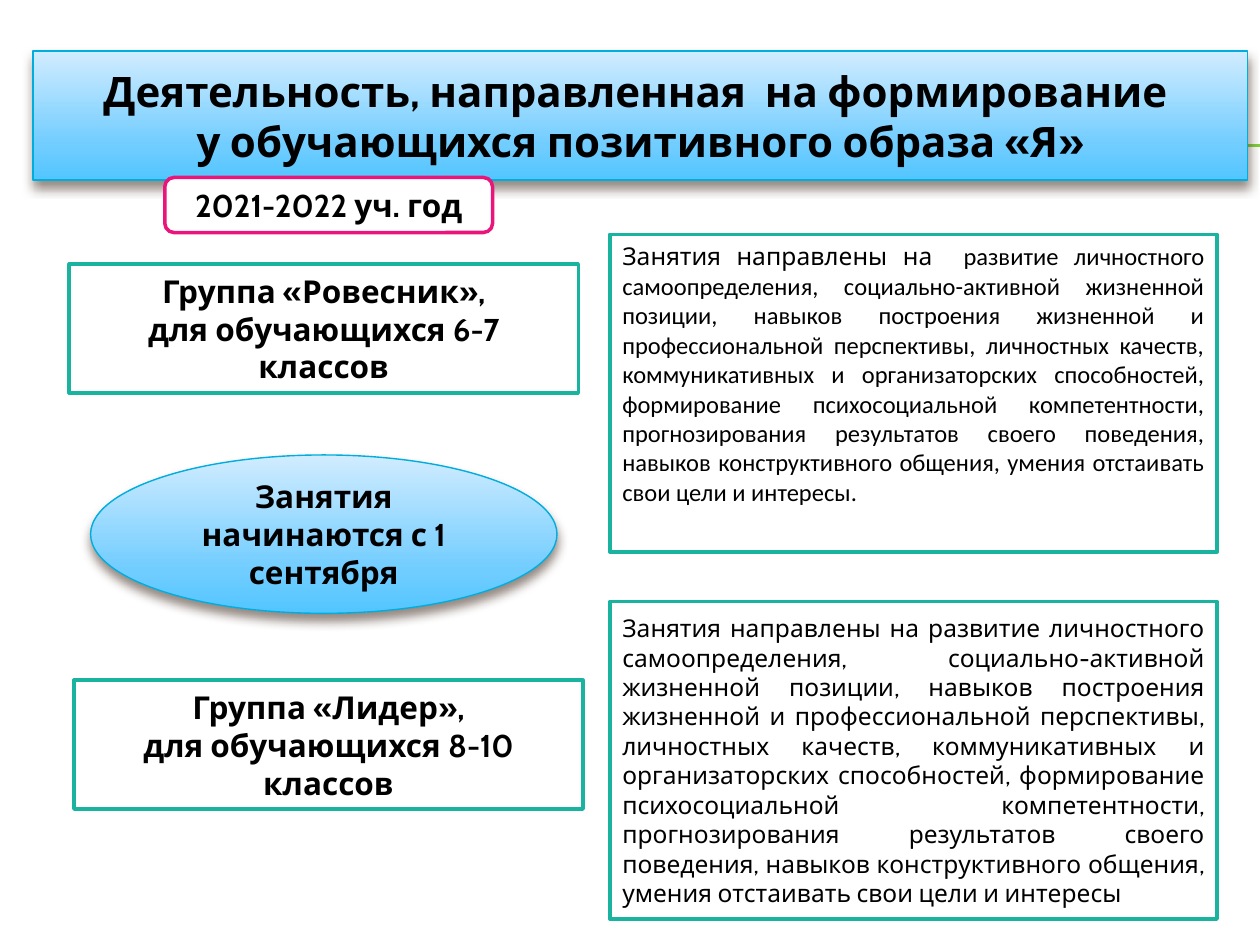
"""Builds a slide on activities that shape a positive self-image in students."""
from copy import deepcopy

from lxml import etree
from pptx import Presentation
from pptx.dml.color import RGBColor
from pptx.enum.shapes import MSO_CONNECTOR, MSO_SHAPE
from pptx.enum.text import MSO_ANCHOR, MSO_AUTO_SIZE, PP_ALIGN
from pptx.oxml.ns import qn
from pptx.util import Pt

RECT, OVAL, ROUNDED = MSO_SHAPE.RECTANGLE, MSO_SHAPE.OVAL, MSO_SHAPE.ROUNDED_RECTANGLE
STRAIGHT = MSO_CONNECTOR.STRAIGHT
CENTER, JUSTIFY = PP_ALIGN.CENTER, PP_ALIGN.JUSTIFY
MIDDLE, NO_AUTOFIT = MSO_ANCHOR.MIDDLE, MSO_AUTO_SIZE.NONE
BLACK = RGBColor(0x00, 0x00, 0x00)
WHITE = RGBColor(0xFF, 0xFF, 0xFF)
GREEN = RGBColor(0x7F, 0xD1, 0x3B)
TEAL = RGBColor(0x1A, 0xB3, 0x9F)
PINK = RGBColor(0xEA, 0x15, 0x7A)
BLUE = RGBColor(0x00, 0xAD, 0xDC)
SHADOW = RGBColor(0x4E, 0x3B, 0x30)
GRADIENT = [
    (0, RGBColor(0xD1, 0xEC, 0xFF)),
    (0.72, RGBColor(0x72, 0xCD, 0xFF)),
    (1, RGBColor(0x52, 0xC6, 0xFF)),
]
HEADING, BODY = "Cabin", "Calibri"

GOALS_START = "Занятия направлены на"
GOALS = (
    "развитие личностного самоопределения, социально-активной жизненной позиции, "
    "навыков построения жизненной и профессиональной перспективы, личностных качеств, "
    "коммуникативных и организаторских способностей, формирование психосоциальной "
    "компетентности, прогнозирования результатов своего поведения, навыков "
    "конструктивного общения, умения отстаивать свои цели и интересы"
)


def write(shape, paragraphs, size, bold=True, align=CENTER):
    frame = shape.text_frame
    frame.word_wrap = True
    frame.auto_size = NO_AUTOFIT
    frame.vertical_anchor = MIDDLE
    for index, runs in enumerate(paragraphs):
        paragraph = frame.add_paragraph() if index else frame.paragraphs[0]
        paragraph.alignment = align
        for text, font_name in runs:
            run = paragraph.add_run()
            run.text = text
            run.font.name = font_name
            run.font.size = Pt(size)
            run.font.bold = bold
            run.font.color.rgb = BLACK


def add_box(kind, left, top, width, height, outline):
    box = slide.shapes.add_shape(kind, Pt(left), Pt(top), Pt(width), Pt(height))
    box.shadow.inherit = False
    box.fill.solid()
    box.fill.fore_color.rgb = WHITE
    box.line.color.rgb = outline
    box.line.width = Pt(2)
    return box


prs = Presentation()
prs.slide_width, prs.slide_height = Pt(720), Pt(540)
slide = prs.slides.add_slide(prs.slide_layouts[5])

title = slide.shapes.title
title.left, title.top, title.width, title.height = Pt(18.9), Pt(29.2), Pt(694), Pt(73.7)
write(title, [
    [("Деятельность, направленная  на формирование ", HEADING)],
    [("у обучающихся позитивного образа «Я»", HEADING)],
], 24)

for rule_top in (82.8, 83.5):
    rule = slide.shapes.add_connector(STRAIGHT, Pt(40.3), Pt(rule_top), Pt(720), Pt(rule_top))
    rule.line.color.rgb = GREEN
    rule.line.width = Pt(0.75)
    etree.SubElement(rule.element.spPr, qn("a:effectLst"))
    title.element.addprevious(rule.element)

goals_peer = add_box(RECT, 348.5, 133.9, 347, 181.5, TEAL)
write(goals_peer, [[(GOALS_START + "  ", HEADING), (GOALS + ".", BODY)]], 14, False, JUSTIFY)
goals_peer.text_frame.margin_bottom = Pt(25.6)

goals_leader = add_box(RECT, 348.5, 343.7, 347, 181.5, TEAL)
write(goals_leader, [[(GOALS_START + " " + GOALS, HEADING)]], 14, False, JUSTIFY)

for left, top, group_name, grades in [
    (39.6, 150.9, "Ровесник", "6-7"),
    (42.3, 388.7, "Лидер", "8-10"),
]:
    group = add_box(RECT, left, top, 290.9, 73.7, TEAL)
    write(group, [
        [(f"Группа «{group_name}»,", HEADING)],
        [(f"для обучающихся {grades} классов", HEADING)],
    ], 18)

start_date = add_box(OVAL, 51.8, 260, 266.5, 90.5, BLUE)
write(start_date, [[("Занятия начинаются с 1 сентября", HEADING)]], 18)

school_year = add_box(ROUNDED, 94.2, 101.4, 187.3, 31.5, PINK)
write(school_year, [[("2021-2022 уч. год", HEADING)]], 18)

for glossy in (title, start_date):
    glossy.fill.gradient()
    glossy.fill.gradient_angle = 270
    properties = glossy.element.spPr
    stop_list = properties.find(".//" + qn("a:gsLst"))
    stop_list.append(deepcopy(stop_list[-1]))
    for stop, (position, color) in zip(glossy.fill.gradient_stops, GRADIENT):
        stop.position = position
        stop.color.rgb = color
    glossy.line.color.rgb = BLUE
    glossy.line.width = Pt(0.79)
    glossy.shadow.inherit = False
    effects = properties.find(qn("a:effectLst"))
    shadow = etree.SubElement(
        effects, qn("a:outerShdw"), blurRad=str(Pt(6)), dist=str(Pt(4)),
        dir="5400000", rotWithShape="0")
    shadow_color = etree.SubElement(shadow, qn("a:srgbClr"), val=str(SHADOW))
    etree.SubElement(shadow_color, qn("a:alpha"), val="60000")

prs.save("out.pptx")
